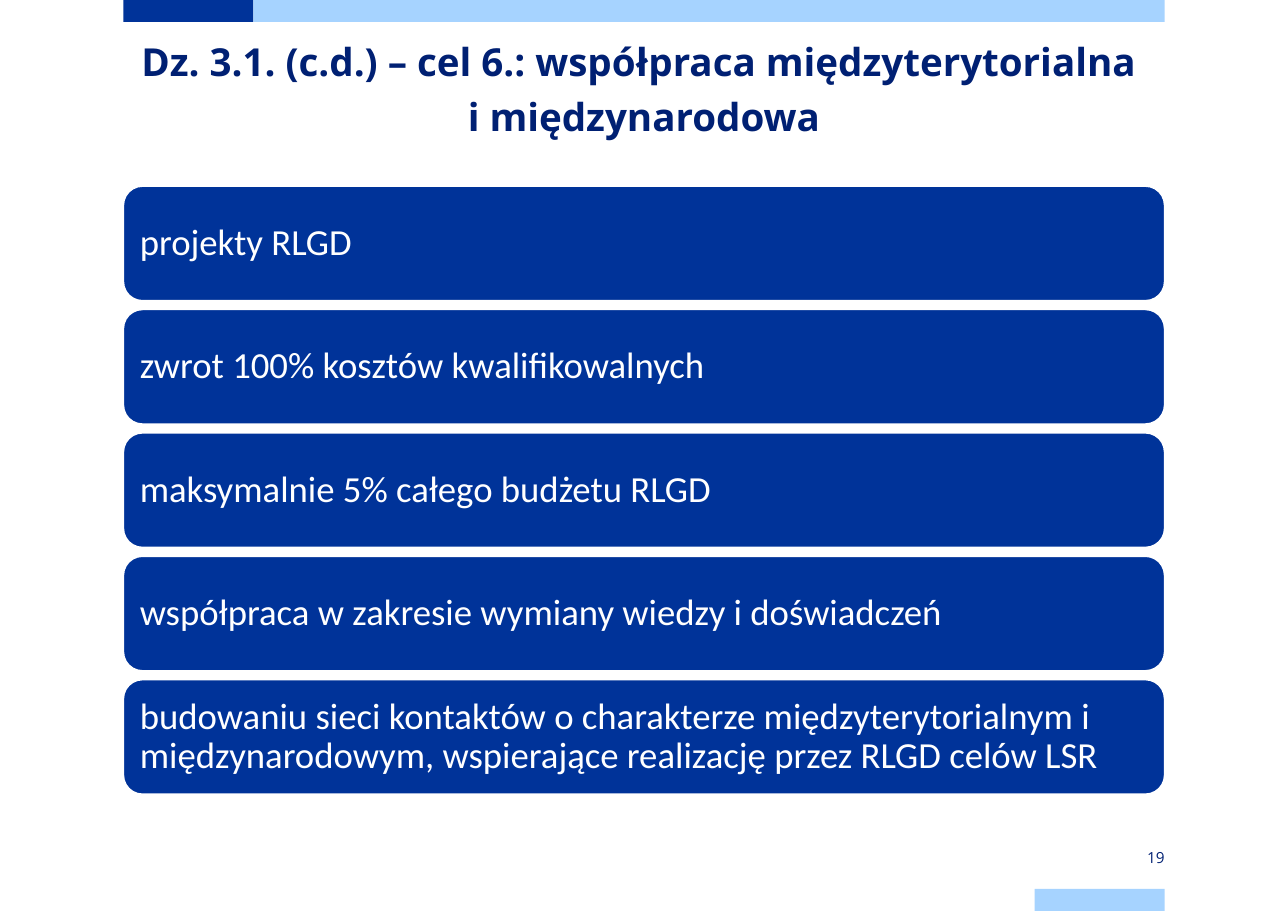
from pptx import Presentation
from pptx.dml.color import RGBColor
from pptx.enum.shapes import MSO_SHAPE as Shape
from pptx.enum.text import MSO_ANCHOR as Anchor, PP_ALIGN as Align
from pptx.util import Inches, Pt

TITLE = "Dz. 3.1. (c.d.) – cel 6.: współpraca międzyterytorialna \vi międzynarodowa"
POINTS = [
    "projekty RLGD",
    "zwrot 100% kosztów kwalifikowalnych",
    "maksymalnie 5% całego budżetu RLGD",
    "współpraca w zakresie wymiany wiedzy i doświadczeń",
    "budowaniu sieci kontaktów o charakterze międzyterytorialnym i "
    "międzynarodowym, wspierające realizację przez RLGD celów LSR",
]
PAGE_NUMBER = "19"

COLORS = {"blue": "003399", "light": "A6D3FF", "navy": "002073", "white": "FFFFFF"}
PAGE_WIDTH, PAGE_HEIGHT = 11.69, 8.27
LEFT, WIDTH = 1.12, 9.45
RIGHT = LEFT + WIDTH
BAR_HEIGHT, SHORT_BAR = 0.2, 1.18
FIRST_TOP, POINT_HEIGHT, POINT_STEP = 1.69, 1.04, 1.12

BARS = [
    (LEFT, 0, SHORT_BAR, "blue"),
    (LEFT + SHORT_BAR, 0, WIDTH - SHORT_BAR, "light"),
    (RIGHT - SHORT_BAR, PAGE_HEIGHT - BAR_HEIGHT, SHORT_BAR, "light"),
]
TITLE_FORMAT = {"name": "Open Sans", "size": Pt(25.2), "bold": True}
POINT_FORMAT = {"name": "Calibri", "size": Pt(24), "bold": False}
NUMBER_FORMAT = {"name": "Open Sans", "size": Pt(10), "bold": False}


def color(name):
    return RGBColor.from_string(COLORS[name])


def add_filled(page, kind, left, top, width, height, fill):
    shape = page.shapes.add_shape(
        kind, Inches(left), Inches(top), Inches(width), Inches(height))
    shape.shadow.inherit = False
    shape.fill.solid()
    shape.fill.fore_color.rgb = color(fill)
    shape.line.fill.background()
    return shape


def write(box, text, font_format, font_color, align, spacing, margin=0):
    frame = box.text_frame
    frame.word_wrap = True
    frame.vertical_anchor = Anchor.MIDDLE
    for side in ("left", "right", "top", "bottom"):
        setattr(frame, f"margin_{side}", Inches(margin))
    para = frame.paragraphs[0]
    para.text = text
    para.alignment = align
    para.line_spacing = spacing
    for span in para.runs:
        for name, value in font_format.items():
            setattr(span.font, name, value)
        span.font.color.rgb = color(font_color)


def main():
    deck = Presentation()
    deck.slide_width, deck.slide_height = Inches(PAGE_WIDTH), Inches(PAGE_HEIGHT)
    page = deck.slides.add_slide(deck.slide_layouts[5])

    for left, top, width, fill in BARS:
        add_filled(page, Shape.RECTANGLE, left, top, width, BAR_HEIGHT, fill)

    title = page.shapes.title
    title.left, title.top = Inches(LEFT), Inches(0.23)
    title.width, title.height = Inches(WIDTH), Inches(1.07)
    write(title, TITLE, TITLE_FORMAT, "navy", Align.CENTER, Pt(36))

    for index, text in enumerate(POINTS):
        box = add_filled(page, Shape.ROUNDED_RECTANGLE, LEFT,
                         FIRST_TOP + index * POINT_STEP, WIDTH, POINT_HEIGHT, "blue")
        box.line.color.rgb = color("white")
        box.line.width = Pt(1)
        # The rounded corners add 0.05 inch to this margin.
        write(box, text, POINT_FORMAT, "white", Align.LEFT, 0.9, margin=0.1)

    number = page.shapes.add_textbox(
        Inches(RIGHT - SHORT_BAR), Inches(7.68), Inches(SHORT_BAR), Inches(0.2))
    write(number, PAGE_NUMBER, NUMBER_FORMAT, "navy", Align.RIGHT, 1.0)

    deck.save("out.pptx")


if __name__ == "__main__":
    main()
